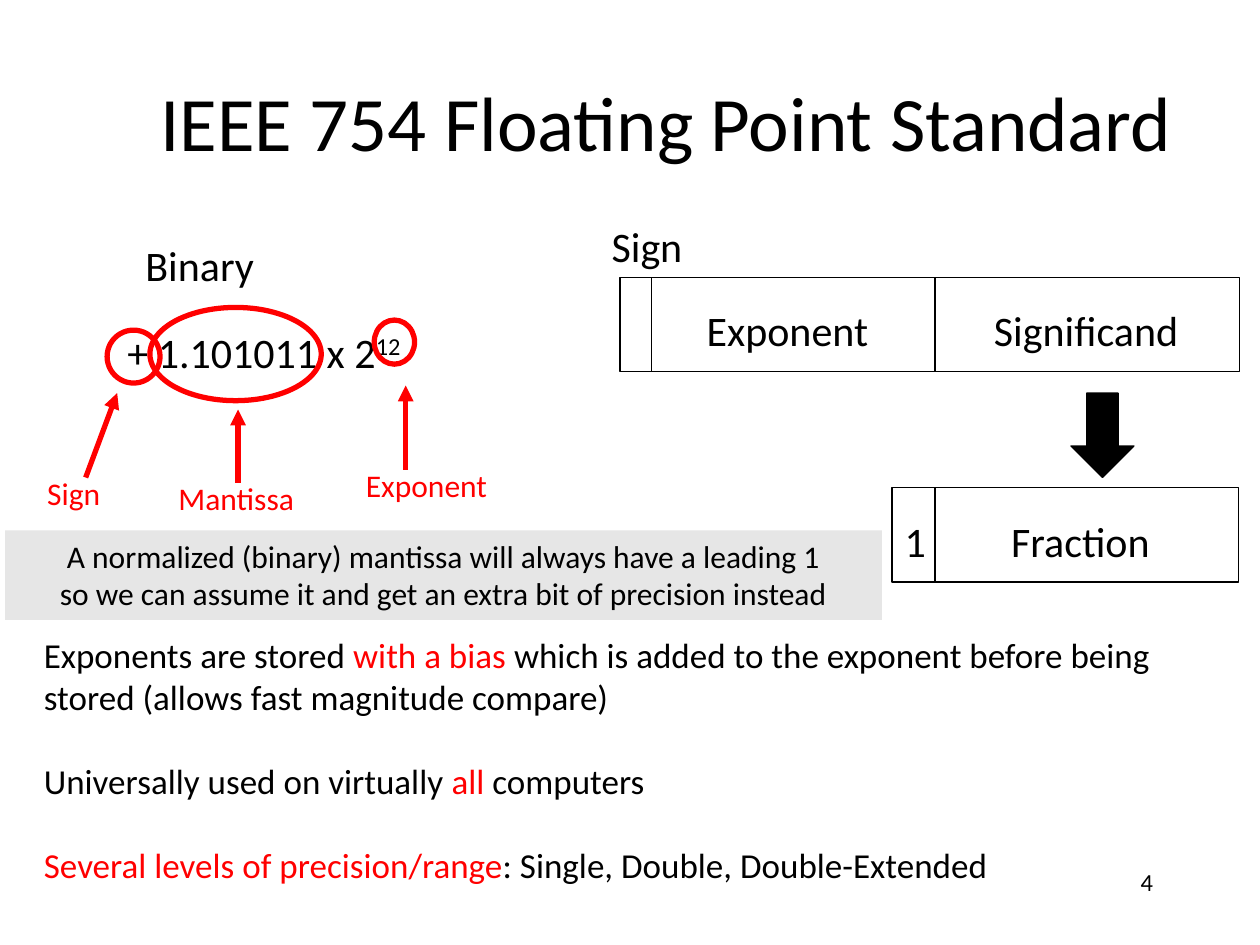
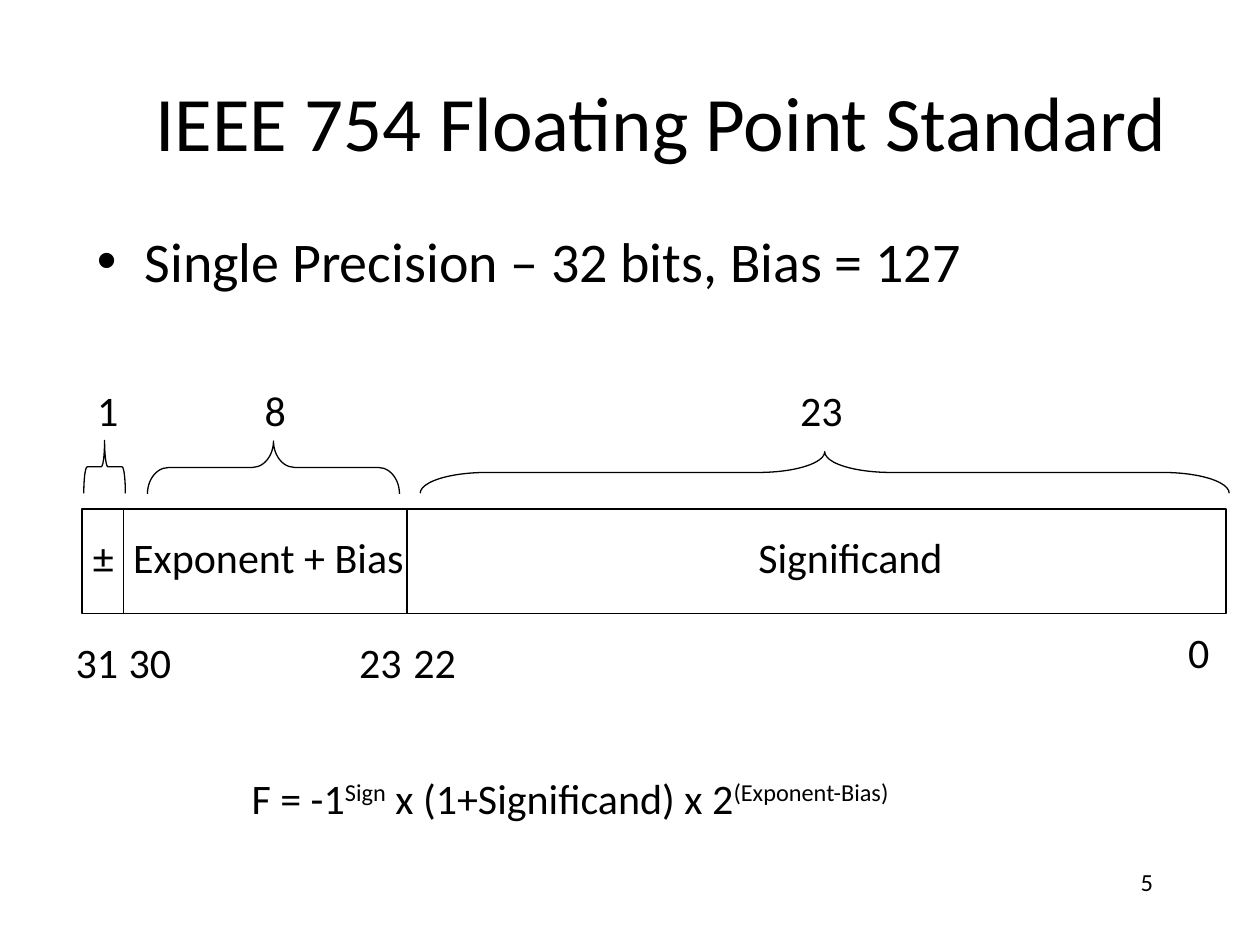
from dataclasses import dataclass
from typing import Any, NamedTuple

import pptx
import pptx.dml.color
import pptx.enum.shapes
import pptx.enum.text
import pptx.oxml
import pptx.oxml.ns
import pptx.util
from pptx.util import Inches

BLACK = "000000"
RED = "FF0000"
GREY = "E6E6E6"
FONT = "Calibri"
TITLE = "IEEE 754 Floating Point Standard"
THIN, THICK = 0.75, 3
SHAPES = pptx.enum.shapes.MSO_SHAPE
ALIGN = pptx.enum.text.PP_ALIGN
GROW = pptx.enum.text.MSO_AUTO_SIZE.SHAPE_TO_FIT_TEXT
DRAWING = pptx.oxml.ns.nsdecls("a")


class Box(NamedTuple):
    left: float
    top: float
    width: float
    height: float


class Run(NamedTuple):
    text: str
    color: str = BLACK
    raised: bool = False


@dataclass
class Label:
    text: str
    box: Box
    size: int = 24
    color: str = BLACK


@dataclass
class Strip:
    box: Box
    dividers: list[float]


@dataclass
class Outline:
    kind: Any
    box: Box
    color: str = BLACK
    weight: float = THIN
    fill: str | None = None
    rotation: int = 0
    adjustment: float | None = None


@dataclass
class Line:
    start: tuple[float, float]
    end: tuple[float, float]
    color: str = BLACK
    weight: float = THIN
    arrow: bool = False


def rgb(color: str) -> pptx.dml.color.RGBColor:
    return pptx.dml.color.RGBColor.from_string(color)


def apply_format(target: Any, values: dict[str, Any]) -> None:
    for name, value in values.items():
        setattr(target, name, value)


def place(shape: Any, box: Box) -> None:
    lengths = (Inches(value) for value in box)
    apply_format(shape, dict(zip(("left", "top", "width", "height"), lengths)))


def write(paragraph: Any, runs: list[Run], size: int, alignment: Any = ALIGN.CENTER) -> None:
    paragraph.alignment = alignment
    for item in runs:
        run = paragraph.add_run()
        run.text = item.text
        apply_format(run.font, {"name": FONT, "size": pptx.util.Pt(size)})
        run.font.color.rgb = rgb(item.color)
        if item.raised:
            run.font._rPr.set("baseline", "30000")


def add_text(slide: Any, box: Box, paragraphs: list[list[Run]], size: int = 24,
             alignment: Any = ALIGN.CENTER, wrap: bool = False, gap: int = 0,
             fill: str | None = None) -> Any:
    shape = slide.shapes.add_textbox(*(Inches(value) for value in box))
    if fill:
        shape.fill.solid()
        shape.fill.fore_color.rgb = rgb(fill)
    frame = shape.text_frame
    apply_format(frame, {"word_wrap": wrap, "auto_size": GROW})
    for index, runs in enumerate(paragraphs):
        paragraph = frame.add_paragraph() if index else frame.paragraphs[0]
        write(paragraph, runs, size, alignment)
        if gap and index < len(paragraphs) - 1:
            paragraph.space_after = pptx.util.Pt(gap)
    return shape


def add_label(slide: Any, label: Label) -> None:
    add_text(slide, label.box, [[Run(label.text, label.color)]], label.size)


def add_line(slide: Any, line: Line) -> None:
    ends = (Inches(value) for value in line.start + line.end)
    connector = slide.shapes.add_connector(pptx.enum.shapes.MSO_CONNECTOR.STRAIGHT, *ends)
    connector.line.color.rgb = rgb(line.color)
    connector.line.width = pptx.util.Pt(line.weight)
    if line.arrow:
        connector.line._get_or_add_ln().append(
            pptx.oxml.parse_xml(f'<a:tailEnd {DRAWING} type="triangle"/>'))
    connector._element.spPr.append(pptx.oxml.parse_xml(f"<a:effectLst {DRAWING}/>"))


def add_outline(slide: Any, outline: Outline) -> None:
    shape = slide.shapes.add_shape(outline.kind, *(Inches(value) for value in outline.box))
    shape.shadow.inherit = False
    shape.rotation = outline.rotation
    if outline.fill:
        shape.fill.solid()
        shape.fill.fore_color.rgb = rgb(outline.fill)
    else:
        shape.fill.background()
    shape.line.color.rgb = rgb(outline.color)
    shape.line.width = pptx.util.Pt(outline.weight)
    if outline.adjustment is not None:
        shape.adjustments[0] = outline.adjustment


def add_strip(slide: Any, strip: Strip) -> None:
    add_outline(slide, Outline(SHAPES.RECTANGLE, strip.box))
    bottom = strip.box.top + strip.box.height
    for position in strip.dividers:
        add_line(slide, Line((position, strip.box.top), (position, bottom)))


def add_slide(presentation: Any, title_width: float, number: int) -> Any:
    slide = presentation.slides.add_slide(presentation.slide_layouts[5])
    title = slide.shapes.title
    place(title, Box(0.75, 0.33, title_width, 1.25))
    title.text_frame.vertical_anchor = pptx.enum.text.MSO_ANCHOR.MIDDLE
    write(title.text_frame.paragraphs[0], [Run(TITLE)], 44)
    add_text(slide, Box(7.17, 6.83, 2.08, 0.5), [[Run(str(number))]], 14, ALIGN.RIGHT, True)
    return slide


def build_standard_slide(presentation: Any) -> None:
    slide = add_slide(presentation, 9.08, 4)
    add_text(slide, Box(0.87, 2.54, 2.45, 0.5), [[Run("+ 1.101011 x 2"), Run("12", raised=True)]])
    for circle in (Box(0.85, 2.62, 0.42, 0.42), Box(1.19, 2.44, 1.36, 0.74),
                   Box(2.97, 2.54, 0.32, 0.35)):
        add_outline(slide, Outline(SHAPES.OVAL, circle, RED, THICK))
    for start, end in (((0.68, 3.79), (0.93, 3.12)), ((1.89, 3.83), (1.89, 3.25)),
                       ((3.22, 3.73), (3.22, 3.06))):
        add_line(slide, Line(start, end, RED, THICK, arrow=True))
    add_text(slide, Box(0.04, 4.21, 6.96, 0.71), [
        [Run("A normalized (binary) mantissa will always have a leading 1")],
        [Run("so we can assume it and get an extra bit of precision instead")],
    ], 18, wrap=True, fill=GREY)
    add_strip(slide, Strip(Box(4.92, 2.2, 4.92, 0.75), [5.17, 7.42]))
    add_strip(slide, Strip(Box(7.08, 3.87, 2.75, 0.75), [7.42]))
    add_outline(slide, Outline(SHAPES.DOWN_ARROW, Box(8.5, 3.12, 0.5, 0.67), fill=BLACK,
                               adjustment=0.5))
    for label in (
        Label("Sign", Box(0.27, 3.71, 0.63, 0.4), 18, RED),
        Label("Mantissa", Box(1.31, 3.75, 1.13, 0.4), 18, RED),
        Label("Exponent", Box(2.8, 3.65, 1.17, 0.4), 18, RED),
        Label("Binary", Box(1.05, 1.85, 1.07, 0.5)),
        Label("Sign", Box(4.75, 1.7, 0.77, 0.5)),
        Label("Exponent", Box(5.5, 2.37, 1.5, 0.5)),
        Label("Significand", Box(7.75, 2.37, 1.74, 0.5)),
        Label("Fraction", Box(7.92, 4.04, 1.31, 0.5)),
        Label("1", Box(7.08, 4.04, 0.37, 0.5)),
    ):
        add_label(slide, label)
    add_text(slide, Box(0.25, 4.98, 9, 2.12), [
        [Run("Exponents are stored "), Run("with a bias ", RED),
         Run("which is added to the exponent before being stored (allows fast magnitude compare)")],
        [Run("Universally used on virtually "), Run("all", RED), Run(" computers")],
        [Run("Several levels of precision/range", RED), Run(": Single, Double, Double-Extended")],
    ], 20, ALIGN.LEFT, wrap=True, gap=24)


def build_single_precision_slide(presentation: Any) -> None:
    slide = add_slide(presentation, 9, 5)
    heading = add_text(slide, Box(0.67, 1.75, 8.5, 0.7),
                       [[Run("Single Precision – 32 bits, Bias = 127")]], 32, ALIGN.LEFT, True)
    paragraph = heading.text_frame.paragraphs[0]
    paragraph.space_before = pptx.util.Pt(6.4)
    properties = paragraph._p.get_or_add_pPr()
    properties.set("marL", str(Inches(0.38)))
    properties.set("indent", str(-Inches(0.38)))
    for bullet in ('buFont {} typeface="Arial"', 'buChar {} char="•"'):
        properties.append(pptx.oxml.parse_xml(f"<a:{bullet.format(DRAWING)}/>"))
    add_strip(slide, Strip(Box(0.65, 4.04, 9.08, 0.83), [0.98, 3.23]))
    for box, curve in ((Box(0.62, 3.54, 0.42, 0.33), 0.08), (Box(1.96, 2.71, 0.42, 2), 0.4),
                       (Box(6.38, 0.54, 0.33, 6.42), 1.6)):
        add_outline(slide, Outline(SHAPES.LEFT_BRACE, box, rotation=90, adjustment=curve))
    for text, left, top, width in (
        ("1", 0.67, 3, 0.37), ("8", 2, 3, 0.37), ("23", 6.25, 3, 0.54),
        ("±", 0.63, 4.17, 0.38), ("Exponent + Bias", 0.92, 4.17, 2.42),
        ("Significand", 5.88, 4.17, 1.74),
        ("31", 0.5, 5, 0.54), ("30", 0.92, 5, 0.54), ("23", 2.75, 5, 0.54),
        ("22", 3.18, 5, 0.54), ("0", 9.33, 4.92, 0.37),
    ):
        add_label(slide, Label(text, Box(left, top, width, 0.5)))
    add_text(slide, Box(1.75, 6.08, 5.55, 0.5), [[
        Run("F = -1"), Run("Sign", raised=True), Run(" x (1+Significand) x 2"),
        Run("(Exponent-Bias)", raised=True),
    ]])


def main() -> None:
    """Build the two floating point slides and save them."""
    presentation = pptx.Presentation()
    apply_format(presentation, {"slide_width": Inches(10), "slide_height": Inches(7.5)})
    build_standard_slide(presentation)
    build_single_precision_slide(presentation)
    presentation.save("out.pptx")


if __name__ == "__main__":
    main()
